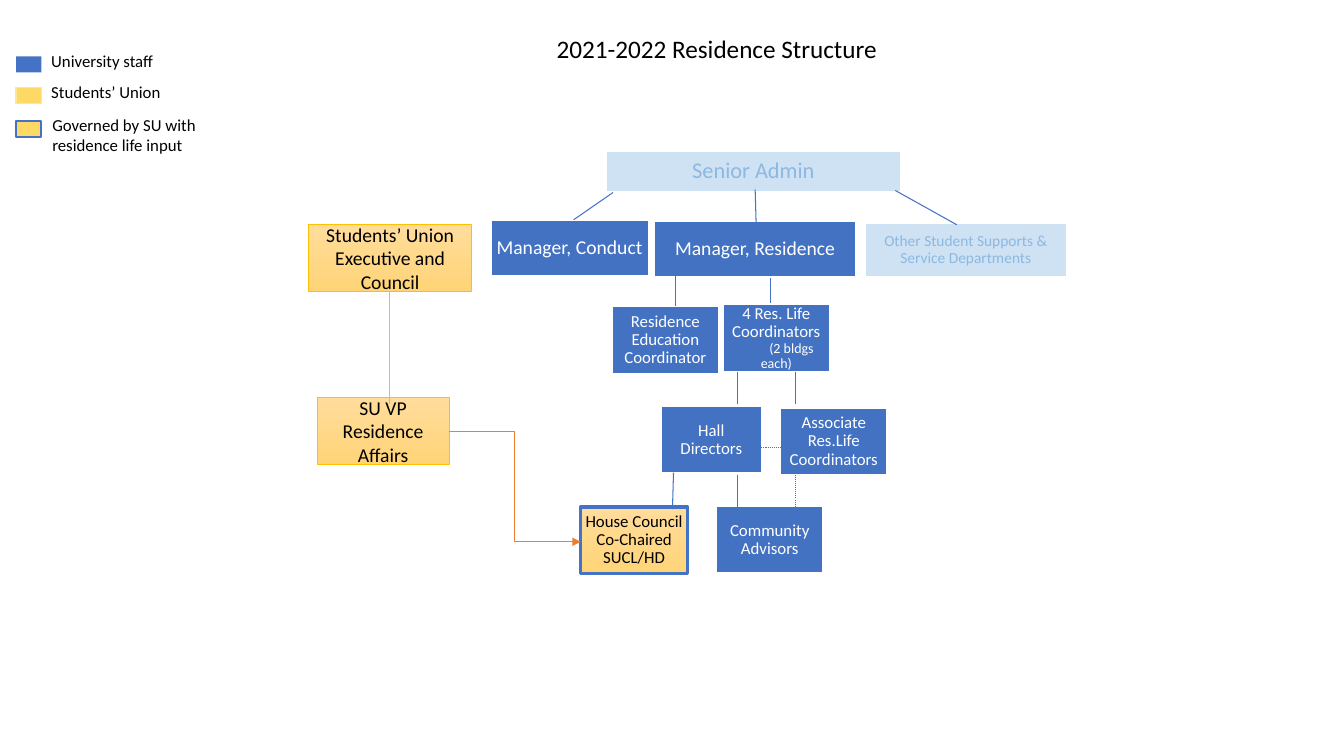
from dataclasses import dataclass

from lxml import etree
from pptx import Presentation
from pptx.dml.color import RGBColor
from pptx.enum.dml import MSO_LINE
from pptx.enum.shapes import MSO_CONNECTOR, MSO_SHAPE
from pptx.enum.text import MSO_ANCHOR, MSO_AUTO_SIZE, PP_ALIGN
from pptx.oxml.ns import qn
from pptx.util import Inches, Pt

RECTANGLE = MSO_SHAPE.RECTANGLE
STRAIGHT, ELBOW = MSO_CONNECTOR.STRAIGHT, MSO_CONNECTOR.ELBOW
DOTTED = MSO_LINE.ROUND_DOT
TOP, MIDDLE = MSO_ANCHOR.TOP, MSO_ANCHOR.MIDDLE
LEFT, CENTER = PP_ALIGN.LEFT, PP_ALIGN.CENTER
FIXED = MSO_AUTO_SIZE.NONE

# Grid: 133.3 columns by 75 rows of square cells
CELL = Inches(0.1)
COLUMNS, ROWS = 133.3, 75
FONT = "Calibri"
COLORS = {
    "black": "000000", "white": "FFFFFF", "staff": "4372C3", "blue": "4472C4",
    "pale": "CFE2F3", "pale text": "8CB8E2", "gold": "FFC000",
    "yellow": "FFD966", "light yellow": "FEE599", "orange": "ED7D31",
    "gradient top": "FFDC9B", "gradient bottom": "FFD478",
}


@dataclass(frozen=True)
class Style:
    fill: str
    line: str
    line_width: float
    text: str
    spacing: float = 0.9
    side_inset: float = 0.1
    top_inset: float = 0.1


@dataclass(frozen=True)
class Box:
    column: float
    row: float
    width: float
    height: float
    style: Style
    lines: tuple[str, ...] = ()
    size: float = 12


@dataclass(frozen=True)
class Link:
    start: tuple[float, float]
    end: tuple[float, float]
    color: str = "blue"
    dotted: bool = False
    elbow: bool = False


@dataclass(frozen=True)
class LegendEntry:
    swatch: Box
    label: str
    label_column: float
    label_height: float


STAFF = Style("staff", "white", 1, "white")
PALE = Style("pale", "white", 1, "pale text")
UNION = Style("gradient", "gold", 0.75, "black", 1, 1, 0.5)
SHARED = Style("gradient", "blue", 2.25, "black")
COORDINATORS = Box(71.7, 30.2, 10.6, 6.7, STAFF, ("4 Res. Life Coordinators",))

BOXES = (
    Box(31.45, 39.45, 13.1, 6.6, UNION, ("SU VP", "Residence Affairs"), 14),
    Box(30.6, 22.3, 16.2, 6.6, UNION, ("Students’ Union Executive and Council",), 14),
    Box(60.1, 15, 29.25, 4, PALE, ("Senior Admin",), 16),
    Box(48.7, 21.85, 15.6, 5.5, STAFF, ("Manager, Conduct",), 14),
    Box(64.9, 21.95, 20, 5.5, STAFF, ("Manager, Residence",), 14),
    Box(85.8, 22.15, 20, 5.35, PALE, ("Other Student Supports & Service Departments",), 11),
    Box(60.7, 30.4, 10.6, 6.7, STAFF, ("Residence Education Coordinator",)),
    Box(65.6, 40.35, 9.9, 6.6, STAFF, ("Hall", "Directors")),
    Box(77.4, 40.5, 10.6, 6.6, STAFF, ("Associate Res.Life Coordinators",)),
    Box(57.6, 50.3, 10.6, 6.6, SHARED, ("House Council", "Co-Chaired", "SUCL/HD")),
    Box(71.05, 50.25, 10.6, 6.6, STAFF, ("Community Advisors",)),
)
LINKS = (
    Link((38.65, 28.9), (38.65, 40.1), "gold"),
    Link((44.5, 42.8), (57.6, 53.75), "orange", elbow=True),
    Link((60.8, 19.1), (56.9, 21.8)),
    Link((74.9, 18.8), (75, 22.4)),
    Link((88.8, 18.9), (94.9, 22.3)),
    Link((67, 27.1), (67, 30.4)),
    Link((76.4, 27.6), (76.4, 30.1)),
    Link((73.1, 36.9), (73.1, 40.1)),
    Link((78.9, 36.9), (78.9, 40.1)),
    Link((66.8, 46.9), (66.7, 50.5)),
    Link((73.1, 47.1), (73.1, 50.3)),
    Link((78.9, 47.1), (78.9, 50.3), dotted=True),
    Link((74.9, 44.4), (77.9, 44.4), dotted=True),
)
LEGEND = (
    LegendEntry(Box(1.6, 5.6, 2.5, 1.6, Style("blue", "blue", 0, "black")),
                "University staff", 4.1, 3),
    LegendEntry(Box(1.6, 8.7, 2.5, 1.6, Style("yellow", "light yellow", 1, "black")),
                "Students’ Union", 4.1, 3),
    LegendEntry(Box(1.6, 12, 2.5, 1.6, Style("yellow", "blue", 1.5, "black")),
                "Governed by SU with residence life input", 4.2, 5),
)


def cells(count: float) -> int:
    return round(count * CELL)


def rgb(name: str) -> RGBColor:
    return RGBColor.from_string(COLORS[name])


def apply(target, **values) -> None:
    for name, value in values.items():
        setattr(target, name, value)


def format_frame(frame, side: float, top: float, anchor) -> None:
    apply(frame, word_wrap=True, auto_size=FIXED, vertical_anchor=anchor,
          margin_left=cells(side), margin_right=cells(side),
          margin_top=cells(top), margin_bottom=cells(top))


def write(paragraph, text: str, size: float, color: str, alignment,
          spacing: float = 1) -> None:
    apply(paragraph, alignment=alignment, line_spacing=spacing)
    run = paragraph.add_run()
    run.text = text
    apply(run.font, name=FONT, size=Pt(size), bold=False)
    run.font.color.rgb = rgb(color)


def draw_box(slide, box: Box):
    style = box.style
    shape = slide.shapes.add_shape(
        RECTANGLE, *map(cells, (box.column, box.row, box.width, box.height)))
    shape.shadow.inherit = False
    if style.fill == "gradient":
        shape.fill.gradient()
        shape.fill.gradient_angle = 270
        for stop, name in zip(shape.fill.gradient_stops,
                              ("gradient top", "gradient bottom")):
            stop.color.rgb = rgb(name)
    else:
        shape.fill.solid()
        shape.fill.fore_color.rgb = rgb(style.fill)
    if style.line_width:
        shape.line.color.rgb = rgb(style.line)
        shape.line.width = Pt(style.line_width)
    else:
        shape.line.fill.background()
    frame = shape.text_frame
    format_frame(frame, style.side_inset, style.top_inset, MIDDLE)
    for index, text in enumerate(box.lines):
        paragraph = frame.add_paragraph() if index else frame.paragraphs[0]
        write(paragraph, text, box.size, style.text, CENTER, style.spacing)
    return shape


def draw_link(slide, link: Link) -> None:
    connector = slide.shapes.add_connector(
        ELBOW if link.elbow else STRAIGHT, *map(cells, link.start + link.end))
    connector.line.color.rgb = rgb(link.color)
    connector.line.width = Pt(0.75)
    if link.dotted:
        connector.line.dash_style = DOTTED
    if link.elbow:
        line = connector.line._get_or_add_ln()
        etree.SubElement(line, qn("a:tailEnd"), type="triangle")
    etree.SubElement(connector._element.spPr, qn("a:effectLst"))


def draw_legend_entry(slide, entry: LegendEntry) -> None:
    draw_box(slide, entry.swatch)
    label = slide.shapes.add_textbox(
        *map(cells, (entry.label_column, entry.swatch.row - 1.1, 21.5, entry.label_height)))
    format_frame(label.text_frame, 1, 0.5, TOP)
    write(label.text_frame.paragraphs[0], entry.label, 12, "black", LEFT)


def main() -> None:
    presentation = Presentation()
    apply(presentation, slide_width=cells(COLUMNS), slide_height=cells(ROWS))
    slide = presentation.slides.add_slide(presentation.slide_layouts[5])

    # Title
    title = slide.shapes.title
    apply(title, left=cells(28.2), top=cells(2.8), width=cells(80.8), height=cells(4))
    format_frame(title.text_frame, 1, 0.5, TOP)
    heading = title.text_frame.paragraphs[0]
    write(heading, "2021-2022 Residence Structure", 18, "black", CENTER)
    heading._p.get_or_add_pPr().set("marL", str(cells(5)))

    # Organisation chart
    for box in BOXES:
        draw_box(slide, box)
    coordinators = draw_box(slide, COORDINATORS)
    buildings = coordinators.text_frame.add_paragraph()
    write(buildings, "(2 bldgs each)", 10, "white", CENTER, 0.9)
    buildings._p.get_or_add_pPr().set("indent", str(cells(3)))
    for link in LINKS:
        draw_link(slide, link)

    # Legend
    for entry in LEGEND:
        draw_legend_entry(slide, entry)

    presentation.save("out.pptx")


if __name__ == "__main__":
    main()
